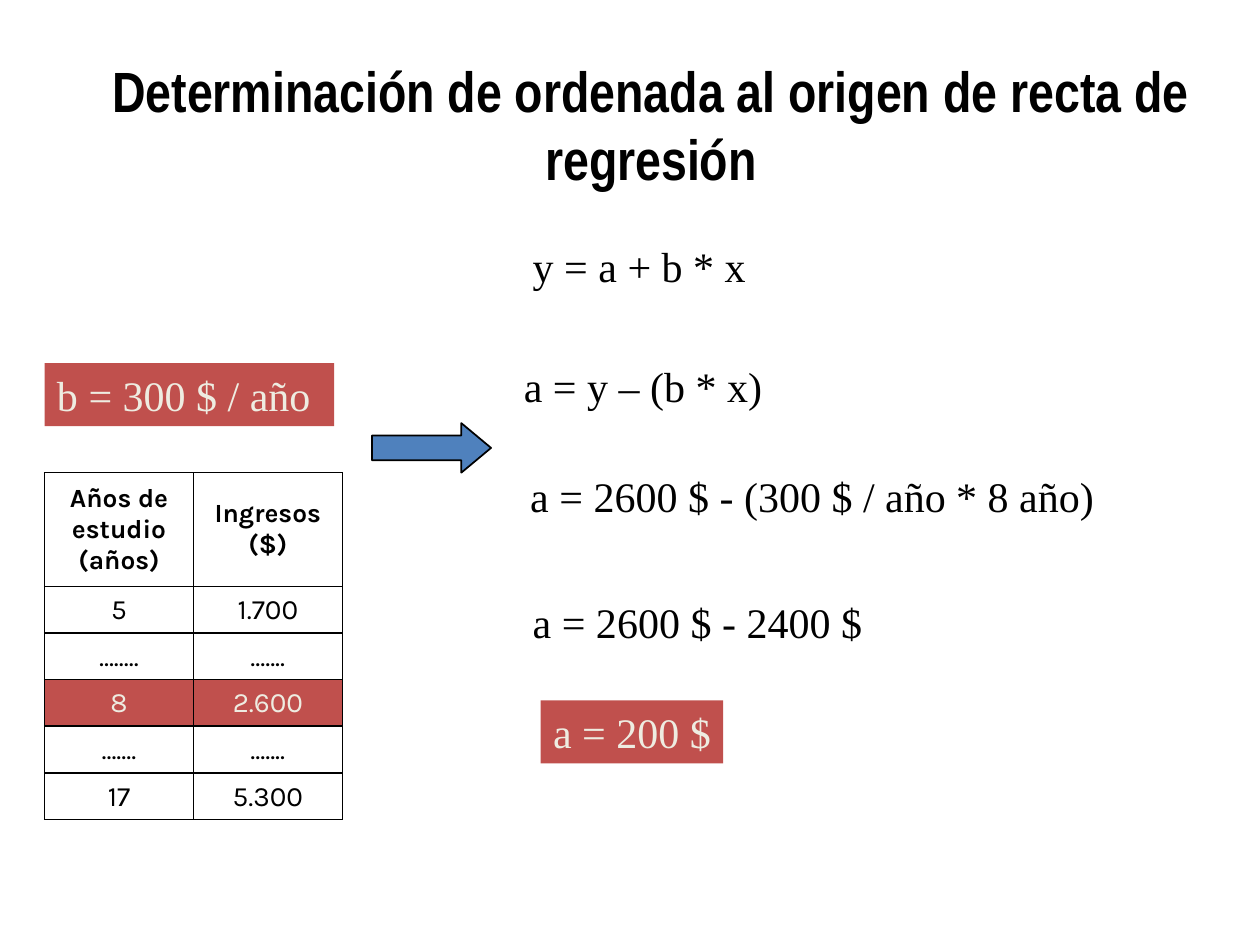
"""Build a slide that works out the intercept of a regression line."""
from lxml import etree
from pptx import Presentation
from pptx.dml.color import RGBColor
from pptx.enum.shapes import MSO_SHAPE
from pptx.enum.text import MSO_ANCHOR, MSO_AUTO_SIZE, PP_ALIGN
from pptx.oxml.ns import qn
from pptx.util import Cm, Pt

RECT, ARROW = MSO_SHAPE.RECTANGLE, MSO_SHAPE.RIGHT_ARROW
MID, LOW, TOP = MSO_ANCHOR.MIDDLE, MSO_ANCHOR.BOTTOM, MSO_ANCHOR.TOP
MIDDLE, LEFT = PP_ALIGN.CENTER, PP_ALIGN.LEFT
FIXED = MSO_AUTO_SIZE.NONE

THEME = {
    "ink": RGBColor(0, 0, 0),
    "pale": RGBColor(0xEE, 0xEC, 0xE1),
    "red": RGBColor(0xC0, 0x50, 0x4D),
    "blue": RGBColor(0x4F, 0x81, 0xBD),
    "title": {"name": "Arial Narrow", "size": Pt(32.4), "bold": True},
    "math": {"name": "Times New Roman", "size": Pt(24), "bold": False},
    "head": {"name": "Karla", "size": Pt(15), "bold": True},
    "data": {"name": "Karla", "size": Pt(16), "bold": False},
}


def write(frame, text, style, color, align):
    """Put one formatted paragraph in a text frame."""
    para = frame.paragraphs[0]
    para.alignment = align
    run = para.add_run()
    run.text = text
    for key, value in THEME[style].items():
        setattr(run.font, key, value)
    run.font.color.rgb = THEME[color]


def edge(cell):
    """Draw a thin line on each side of a table cell."""
    props = cell._tc.get_or_add_tcPr()
    for side in ("a:lnL", "a:lnR", "a:lnT", "a:lnB"):
        line = etree.SubElement(props, qn(side), w=str(Pt(1)))
        fill = etree.SubElement(line, qn("a:solidFill"))
        etree.SubElement(fill, qn("a:srgbClr"), val=str(THEME["ink"]))


deck = Presentation()
deck.slide_width, deck.slide_height = Cm(25.4), Cm(19.05)
slide = deck.slides.add_slide(deck.slide_layouts[5])
shapes = slide.shapes

title = shapes.title
place = {"left": Cm(1.9), "top": Cm(0.91), "width": Cm(22.45), "height": Cm(3.18)}
for key, value in place.items():
    setattr(title, key, value)
frame = title.text_frame
for key, value in {"auto_size": FIXED, "vertical_anchor": MID, "word_wrap": True}.items():
    setattr(frame, key, value)
write(frame, "Determinación de ordenada al origen de recta de regresión",
      "title", "ink", MIDDLE)

steps = [
    ("b = 300 $ / año", 0.9, 7.32, 5.84, True),
    ("y = a + b * x", 10.49, 4.72, 4.8, False),
    ("a = y – (b * x)", 10.31, 7.14, 5.59, False),
    ("a = 2600 $ - (300 $ / año * 8 año)", 10.44, 9.37, 12.19, False),
    ("a = 2600 $ - 2400 $", 10.49, 11.91, 7.37, False),
    ("a = 200 $", 10.9, 14.12, 3.68, True),
]
for text, left, top, width, key in steps:
    spot = Cm(left), Cm(top), Cm(width), Cm(1.27)
    if key:
        box = shapes.add_shape(RECT, *spot)
        box.shadow.inherit = False
        box.fill.solid()
        box.fill.fore_color.rgb = THEME["red"]
        box.line.fill.background()
    else:
        box = shapes.add_textbox(*spot)
    frame = box.text_frame
    for name, value in {"auto_size": FIXED, "vertical_anchor": TOP, "word_wrap": False}.items():
        setattr(frame, name, value)
    write(frame, text, "math", "pale" if key else "ink", LEFT)

rows = [
    ("Años de estudio (años)", "Ingresos ($)"),
    ("5", "1.700"),
    ("........", "......."),
    ("8", "2.600"),
    (".......", "......."),
    ("17", "5.300"),
]
table = shapes.add_table(len(rows), 2, Cm(0.9), Cm(9.53), Cm(6), Cm(6.99)).table
for name in ("first_row", "horz_banding"):
    setattr(table, name, False)
for col in table.columns:
    col.width = Cm(3)
for i, row in enumerate(rows):
    table.rows[i].height = Cm(0.94 if i else 2.29)
    mark = row[0] == "8"
    for j, text in enumerate(row):
        cell = table.cell(i, j)
        edge(cell)
        cell.vertical_anchor = LOW if i else MID
        if mark:
            cell.fill.solid()
            cell.fill.fore_color.rgb = THEME["red"]
        else:
            cell.fill.background()
        write(cell.text_frame, text, "data" if i else "head",
              "pale" if mark else "ink", MIDDLE)

arrow = shapes.add_shape(ARROW, Cm(7.5), Cm(8.53), Cm(2.4), Cm(1))
arrow.adjustments[0], arrow.adjustments[1] = 0.5, 0.6
arrow.shadow.inherit = False
arrow.fill.solid()
arrow.fill.fore_color.rgb = THEME["blue"]
arrow.line.color.rgb = THEME["ink"]
arrow.line.width = Pt(1)

deck.save("out.pptx")
